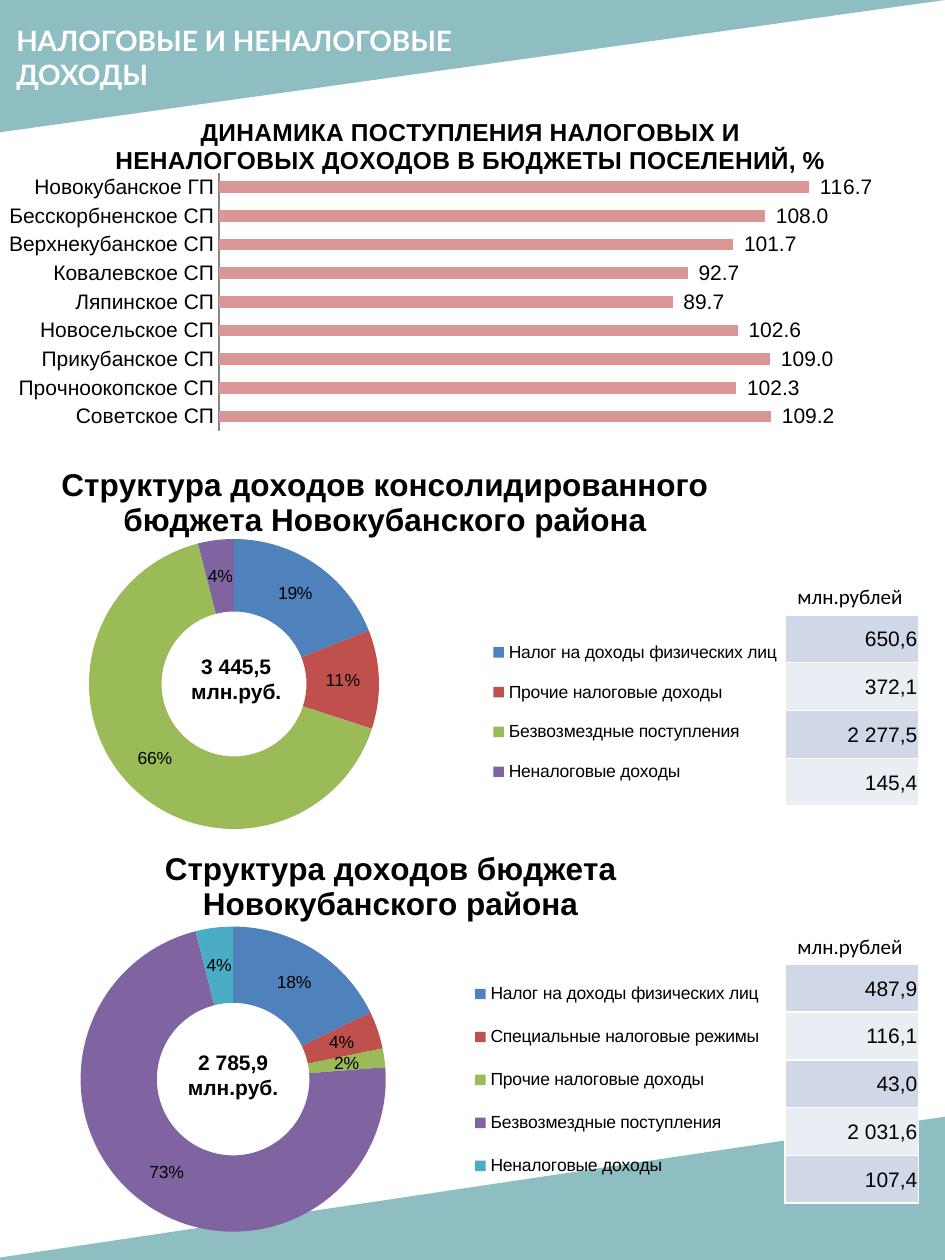
from dataclasses import dataclass

from lxml import etree
from pptx import Presentation
from pptx.chart.data import CategoryChartData
from pptx.dml.color import RGBColor
from pptx.enum.chart import XL_CHART_TYPE as ChartType
from pptx.enum.chart import XL_LABEL_POSITION as LabelPos
from pptx.enum.chart import XL_LEGEND_POSITION as LegendPos
from pptx.enum.chart import XL_TICK_MARK as Tick
from pptx.enum.shapes import MSO_SHAPE as Shape
from pptx.enum.text import MSO_ANCHOR as Anchor
from pptx.enum.text import PP_ALIGN as Align
from pptx.oxml import parse_xml
from pptx.oxml.ns import nsdecls, qn
from pptx.util import Pt


@dataclass(frozen=True)
class Theme:
    teal: RGBColor = RGBColor.from_string("519AA0")
    white: RGBColor = RGBColor.from_string("FFFFFF")
    black: RGBColor = RGBColor.from_string("000000")
    axis: RGBColor = RGBColor.from_string("868686")
    bar: RGBColor = RGBColor.from_string("D99694")
    bands: tuple = tuple(map(RGBColor.from_string, ("D0D8E8", "E9EDF4")))
    slices: tuple = tuple(map(RGBColor.from_string,
                              ("4F81BD", "C0504D", "9BBB59", "8064A2", "4BACC6")))
    font: str = "Arial"
    header: int = 16
    chart_title: int = 14
    ring_title: int = 18
    body: int = 12
    small: int = 10


THEME = Theme()
UNIT = "млн.рублей"

prs = Presentation()
prs.slide_width, prs.slide_height = Pt(540), Pt(720)
slide = prs.slides.add_slide(prs.slide_layouts[6])
shapes = slide.shapes


def add_text(box, lines, size, font=THEME.font, color=THEME.black, bold=False,
             align=Align.LEFT):
    frame = shapes.add_textbox(*map(Pt, box)).text_frame
    frame.word_wrap = True
    frame.text = "\n".join(lines)
    for paragraph in frame.paragraphs:
        paragraph.alignment = align
        paragraph.font.name, paragraph.font.size = font, Pt(size)
        paragraph.font.bold, paragraph.font.color.rgb = bold, color


def add_chart(kind, box, title, title_size, size, categories, values, areas):
    """Add a one-series chart; areas lists (tag, child index, x, y, w, h) as fractions."""
    data = CategoryChartData()
    data.categories = categories
    data.add_series("Series 1", values)
    chart = shapes.add_chart(kind, *map(Pt, box), data).chart
    chart.font.name, chart.font.size = THEME.font, Pt(size)
    chart.font.color.rgb = THEME.black
    chart.has_title = True
    chart.chart_title.text_frame.text = title
    heading = chart.chart_title.text_frame.paragraphs[0].font
    heading.name, heading.size, heading.bold = THEME.font, Pt(title_size), True
    heading.color.rgb = THEME.black
    chart.has_legend = kind == ChartType.DOUGHNUT
    if chart.has_legend:
        chart.legend.position = LegendPos.RIGHT
        chart.legend.include_in_layout = False
    root = chart._chartSpace
    root.find(qn("c:chart")).addnext(parse_xml(
        f'<c:spPr {nsdecls("c", "a")}><a:noFill/><a:ln><a:noFill/></a:ln></c:spPr>'))
    for tag, index, *fractions in areas:
        area = next(root.iter(qn(tag)))
        for old in area.findall(qn("c:layout")):
            area.remove(old)
        inner = '<c:layoutTarget val="inner"/>' if tag == "c:plotArea" else ""
        modes = '<c:xMode val="edge"/><c:yMode val="edge"/>'
        sizes = "".join(f'<c:{k} val="{v}"/>' for k, v in zip("xywh", fractions))
        area.insert(index, parse_xml(
            f'<c:layout {nsdecls("c")}><c:manualLayout>{inner}{modes}{sizes}'
            '</c:manualLayout></c:layout>'))
    return chart


# Corner wedges and header
for box, flip in (((0, 0, 540, 75.6), "flipH"), ((-9.4, 637.9, 550.8, 82.1), "flipV")):
    wedge = shapes.add_shape(Shape.RIGHT_TRIANGLE, *map(Pt, box))
    wedge.rotation = 180
    wedge._element.spPr.find(qn("a:xfrm")).set(flip, "1")
    wedge.shadow.inherit = False
    wedge.line.fill.background()
    wedge.fill.solid()
    wedge.fill.fore_color.rgb = THEME.teal
    wedge_color = next(wedge._element.spPr.iter(qn("a:srgbClr")))
    etree.SubElement(wedge_color, qn("a:alpha")).set("val", "64000")

add_text((2.2, 10, 324.7, 46), ["НАЛОГОВЫЕ И НЕНАЛОГОВЫЕ ДОХОДЫ"], THEME.header,
         "Lato", THEME.white, True)

# Settlement dynamics
settlements = {
    "Новокубанское ГП": 116.7, "Бесскорбненское СП": 108.0, "Верхнекубанское СП": 101.7,
    "Ковалевское СП": 92.7, "Ляпинское СП": 89.7, "Новосельское СП": 102.6,
    "Прикубанское СП": 109.0, "Прочноокопское СП": 102.3, "Советское СП": 109.2,
}
dynamics = add_chart(
    ChartType.BAR_CLUSTERED, (0, 56.2, 537.8, 198),
    "ДИНАМИКА ПОСТУПЛЕНИЯ НАЛОГОВЫХ И НЕНАЛОГОВЫХ ДОХОДОВ В БЮДЖЕТЫ ПОСЕЛЕНИЙ, %",
    THEME.chart_title, THEME.body, settlements.keys(), settlements.values(),
    [("c:plotArea", 0, 0.233, 0.215, 0.752, 0.745)])
names, scale = dynamics.category_axis, dynamics.value_axis
names.reverse_order = True
names.major_tick_mark = names.minor_tick_mark = Tick.NONE
names.format.line.color.rgb = THEME.axis
names.format.line.width = Pt(1)
scale.visible = scale.has_major_gridlines = False
scale.minimum_scale, scale.maximum_scale = 0, 140
bars = dynamics.plots[0]
bars.gap_width, bars.overlap, bars.vary_by_categories = 150, -25, False
bars.series[0].format.fill.solid()
bars.series[0].format.fill.fore_color.rgb = THEME.bar
growth = bars.series[0].data_labels
growth.show_value = True
growth.number_format, growth.number_format_is_linked = r"#\ ##0.0", False
growth.position = LabelPos.OUTSIDE_END

# Revenue structure: ring, total in the middle, amounts on the right
INCOME, OTHER = "Налог на доходы физических лиц", "Прочие налоговые доходы"
GRANTS, NON_TAX = "Безвозмездные поступления", "Неналоговые доходы"
budgets = [
    dict(title="Структура доходов консолидированного бюджета Новокубанского района",
         box=(-22.3, 253.4, 484.6, 227.5), plot=(0.151, 0.24, 0.342, 0.729),
         legend=(0.62, 0.45, 0.35, 0.45), total="3 445,5", total_box=(97.9, 370, 74.2, 36),
         unit_top=329.8, table_top=351.4,
         rows=[(INCOME, 19, "650,6"), (OTHER, 11, "372,1"), (GRANTS, 66, "2 277,5"),
               (NON_TAX, 4, "145,4")]),
    dict(title="Структура доходов бюджета Новокубанского района",
         box=(0, 472.3, 446.4, 247.7), plot=(0.103, 0.231, 0.391, 0.704),
         legend=(0.6, 0.31, 0.38, 0.55), total="2 785,9", total_box=(97.9, 596.2, 70.6, 36),
         unit_top=529.9, table_top=551,
         rows=[(INCOME, 18, "487,9"), ("Специальные налоговые режимы", 4, "116,1"),
               (OTHER, 2, "43,0"), (GRANTS, 73, "2 031,6"), (NON_TAX, 4, "107,4")]),
]
TABLE_LEFT, TABLE_WIDTH, ROW_HEIGHT = 448.6, 76.3, 27.3
UNIT_WIDTH = 86

for budget in budgets:
    sources, shares, amounts = zip(*budget["rows"])
    add_text((TABLE_LEFT, budget["unit_top"], UNIT_WIDTH, 21.6), [UNIT], THEME.body,
             "Calibri")

    table = shapes.add_table(len(amounts), 1, Pt(TABLE_LEFT), Pt(budget["table_top"]),
                             Pt(TABLE_WIDTH), Pt(ROW_HEIGHT * len(amounts))).table
    table.first_row = table.horz_banding = False
    for i, amount in enumerate(amounts):
        table.rows[i].height = Pt(ROW_HEIGHT)
        cell = table.cell(i, 0)
        cell.margin_left = cell.margin_right = cell.margin_top = Pt(0.7)
        cell.margin_bottom = 0
        cell.vertical_anchor = Anchor.MIDDLE
        cell.text = amount
        entry = cell.text_frame.paragraphs[0]
        entry.alignment = Align.RIGHT
        entry.font.name, entry.font.size = THEME.font, Pt(THEME.body)
        entry.font.color.rgb = THEME.black
        cell.fill.solid()
        cell.fill.fore_color.rgb = THEME.bands[i % 2]
        for index, side in enumerate("LRTB"):
            cell._tc.get_or_add_tcPr().insert(index, parse_xml(
                f'<a:ln{side} {nsdecls("a")} w="12700"><a:solidFill>'
                f'<a:srgbClr val="{THEME.white}"/></a:solidFill></a:ln{side}>'))

    ring = add_chart(ChartType.DOUGHNUT, budget["box"], budget["title"], THEME.ring_title,
                     THEME.small, sources, shares,
                     [("c:plotArea", 0, *budget["plot"]), ("c:legend", 1, *budget["legend"])])
    ring.plots[0].vary_by_categories = True
    structure = ring.plots[0].series[0]
    for i, color in enumerate(THEME.slices[:len(shares)]):
        fill = structure.points[i].format.fill
        fill.solid()
        fill.fore_color.rgb = color
    # Rounded shares may add up to 101, so the labels show the values themselves
    share_labels = structure.data_labels
    share_labels.show_value, share_labels.show_percentage = True, False
    share_labels.number_format, share_labels.number_format_is_linked = '0"%"', False

    add_text(budget["total_box"], [budget["total"], "млн.руб."], THEME.body, bold=True,
             align=Align.CENTER)

prs.save("out.pptx")
